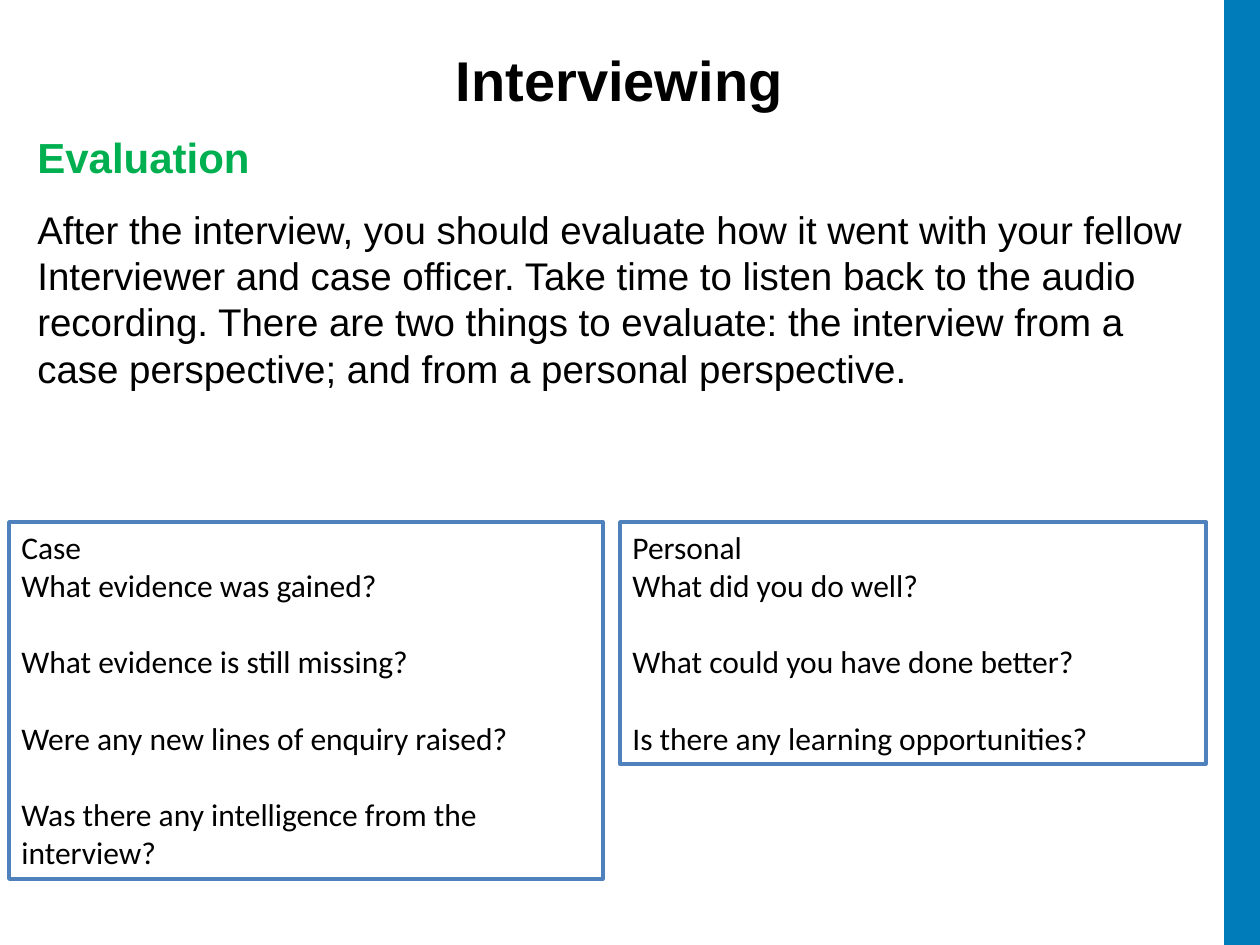
from dataclasses import dataclass

from pptx import Presentation
from pptx import util as u
from pptx.dml.color import RGBColor
from pptx.enum import shapes, text

SCALE = 914400 / 126


@dataclass(frozen=True)
class Theme:
    """Colours, fonts and type sizes of the slide."""
    black: str = "000000"
    white: str = "FFFFFF"
    green: str = "00B050"
    band: str = "007CBA"
    border: str = "4F81BD"
    heading_font: str = "Arial"
    card_font: str = "Calibri"
    title_size: int = 32
    heading_size: int = 24
    body_size: int = 22
    card_size: int = 18
    line_width: int = 2


THEME = Theme()


def emu(box):
    """Turn a box in px into EMU lengths."""
    return [u.Emu(round(length * SCALE)) for length in box]


def format_para(para, words, color, font, spacing=None):
    """Write words into a paragraph and format them."""
    span = para.add_run()
    span.text = words
    span.font.color.rgb = RGBColor.from_string(color)
    for name, value in font.items():
        setattr(span.font, name, value)
    for name, value in (spacing or {}).items():
        setattr(para, name, value)


def add_panel(page, box, fill, border):
    """Add a flat rectangle with a fill and a border."""
    panel = page.shapes.add_shape(shapes.MSO_SHAPE.RECTANGLE, *emu(box))
    panel.shadow.inherit = False
    panel.fill.solid()
    panel.fill.fore_color.rgb = RGBColor.from_string(fill)
    panel.line.color.rgb = RGBColor.from_string(border)
    panel.line.width = u.Pt(THEME.line_width)
    return panel


def add_title(page, box, words):
    """Place and format the title placeholder."""
    title = page.shapes.title
    title.left, title.top, title.width, title.height = emu(box)
    title.text_frame.vertical_anchor = text.MSO_ANCHOR.MIDDLE
    font = {"name": THEME.heading_font, "size": u.Pt(THEME.title_size), "bold": True}
    format_para(title.text_frame.paragraphs[0], words, THEME.black, font,
                {"alignment": text.PP_ALIGN.CENTER})


def add_introduction(page, box, heading, body):
    """Add the green heading and the paragraph under it."""
    frame = page.shapes.add_textbox(*emu(box)).text_frame
    frame.word_wrap = True
    font = {"name": THEME.heading_font, "size": u.Pt(THEME.heading_size), "bold": True}
    format_para(frame.paragraphs[0], heading, THEME.green, font)
    font = {"name": THEME.heading_font, "size": u.Pt(THEME.body_size), "bold": False}
    format_para(frame.add_paragraph(), body, THEME.black, font,
                {"space_before": u.Pt(14)})


def add_card(page, box, heading, questions):
    """Add a bordered card with a heading and spaced questions."""
    frame = add_panel(page, box, THEME.white, THEME.border).text_frame
    frame.word_wrap = True
    frame.vertical_anchor = text.MSO_ANCHOR.TOP
    font = {"name": THEME.card_font, "size": u.Pt(THEME.card_size)}
    for index, words in enumerate([heading, *questions]):
        para = frame.add_paragraph() if index else frame.paragraphs[0]
        spacing = {"alignment": text.PP_ALIGN.LEFT}
        if index > 1:
            spacing["space_before"] = u.Pt(22)
        format_para(para, words, THEME.black, font, spacing)


def main():
    """Build the slide and save it."""
    deck = Presentation()
    deck.slide_width, deck.slide_height = emu((1260, 945))
    page = deck.slides.add_slide(deck.slide_layouts[5])
    add_panel(page, (1226, 0, 34, 945), THEME.band, THEME.band)
    add_introduction(
        page, (25, 125, 1171, 373), "Evaluation",
        "After the interview, you should evaluate how it went with your fellow "
        "Interviewer and case officer. Take time to listen back to the audio "
        "recording. There are two things to evaluate: the interview from a case "
        "perspective; and from a personal perspective.")
    add_title(page, (64, 35, 1111, 89), "Interviewing")
    add_card(page, (620, 522, 586, 242), "Personal", [
        "What did you do well?",
        "What could you have done better?",
        "Is there any learning opportunities?"])
    add_card(page, (9, 522, 594, 357), "Case", [
        "What evidence was gained?",
        "What evidence is still missing?",
        "Were any new lines of enquiry raised?",
        "Was there any intelligence from the interview?"])
    deck.save("out.pptx")


if __name__ == "__main__":
    main()
